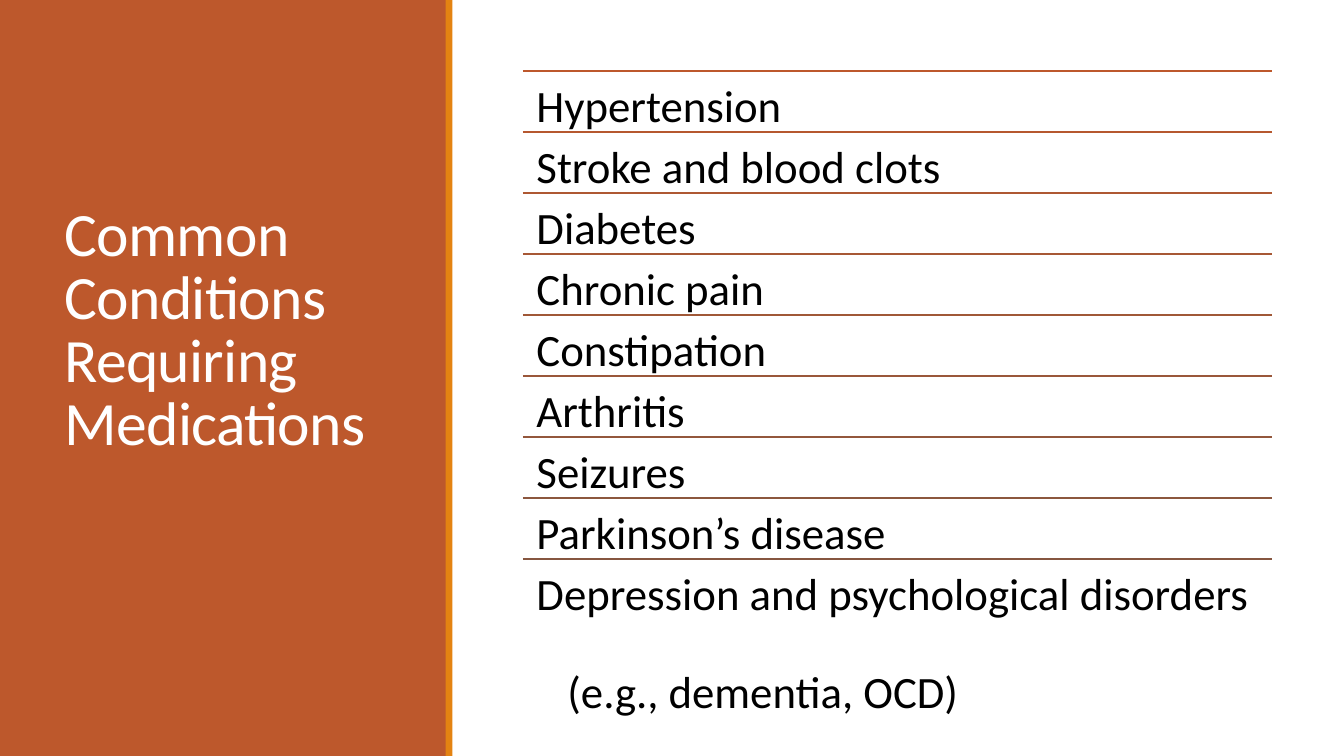
import pptx
import pptx.dml.color
import pptx.enum.shapes
import pptx.enum.text
import pptx.oxml.ns
import pptx.util
from lxml import etree

Cm, Pt = pptx.util.Cm, pptx.util.Pt
ANCHOR = pptx.enum.text.MSO_ANCHOR


def rgb(value):
    return pptx.dml.color.RGBColor.from_string(value)


def write(para, text, size, color, line_spacing, tracking=0):
    """Add one formatted run; tracking is in hundredths of a point."""
    para.alignment = pptx.enum.text.PP_ALIGN.LEFT
    para.line_spacing = line_spacing
    span = para.add_run()
    span.text = text
    span.font.name = "Calibri"
    span.font.size = Pt(size)
    span.font.color.rgb = rgb(color)
    if tracking:
        span.font._element.set("spc", str(tracking))


deck = pptx.Presentation()
deck.slide_width, deck.slide_height = Cm(33.87), Cm(19.05)
page = deck.slides.add_slide(deck.slide_layouts[5])

# Side panel and its accent stripe
for left, width, color in [(0, 11.25, "BD582C"), (11.23, 0.17, "E48312")]:
    panel = page.shapes.add_shape(
        pptx.enum.shapes.MSO_SHAPE.RECTANGLE, Cm(left), 0, Cm(width), deck.slide_height)
    panel.shadow.inherit = False
    panel.fill.solid()
    panel.fill.fore_color.rgb = rgb(color)
    panel.line.fill.background()

# Title, brought in front of the panel
title = page.shapes.title
page.shapes._spTree.append(title._element)
title.left, title.top, title.width, title.height = Cm(1.37), Cm(0.36), Cm(8.56), Cm(16.03)
frame = title.text_frame
frame.word_wrap = True
frame.auto_size = pptx.enum.text.MSO_AUTO_SIZE.NONE
frame.vertical_anchor = ANCHOR.MIDDLE
write(frame.paragraphs[0], "Common Conditions Requiring Medications",
      size=44, color="FFFFFF", line_spacing=0.85, tracking=-50)

# Ruled list of conditions
conditions = [
    ("BD582C", ["Hypertension"]),
    ("B6582F", ["Stroke and blood clots"]),
    ("AE5832", ["Diabetes"]),
    ("A75835", ["Chronic pain"]),
    ("A05837", ["Constipation"]),
    ("9A573A", ["Arthritis"]),
    ("93573C", ["Seizures"]),
    ("8C573E", ["Parkinson’s disease"]),
    ("865640", ["Depression and psychological disorders", "(e.g., dementia, OCD)"]),
]
list_left, list_top, list_width = 13.18, 1.78, 18.87
row_height, last_row_height = 12.3 / 8, 3.38

for index, (color, lines) in enumerate(conditions):
    top = Cm(list_top + index * row_height)
    rule = page.shapes.add_connector(
        pptx.enum.shapes.MSO_CONNECTOR.STRAIGHT,
        Cm(list_left), top, Cm(list_left + list_width), top)
    rule.line.color.rgb = rgb(color)
    rule.line.width = Pt(1.25)
    etree.SubElement(rule._element.spPr, pptx.oxml.ns.qn("a:effectLst"))

    height = row_height if len(lines) == 1 else last_row_height
    box = page.shapes.add_textbox(Cm(list_left), top, Cm(list_width), Cm(height))
    frame = box.text_frame
    frame.word_wrap = True
    frame.vertical_anchor = ANCHOR.TOP
    frame.margin_left = frame.margin_right = Cm(0.34)
    frame.margin_top = frame.margin_bottom = Cm(0.34)
    write(frame.paragraphs[0], lines[0], size=32, color="000000", line_spacing=0.9)
    for example in lines[1:]:
        para = frame.add_paragraph()
        para.space_before = Pt(35)
        para._p.get_or_add_pPr().set("marL", str(Cm(0.78)))
        write(para, example, size=32, color="000000", line_spacing=0.9)

deck.save("out.pptx")
